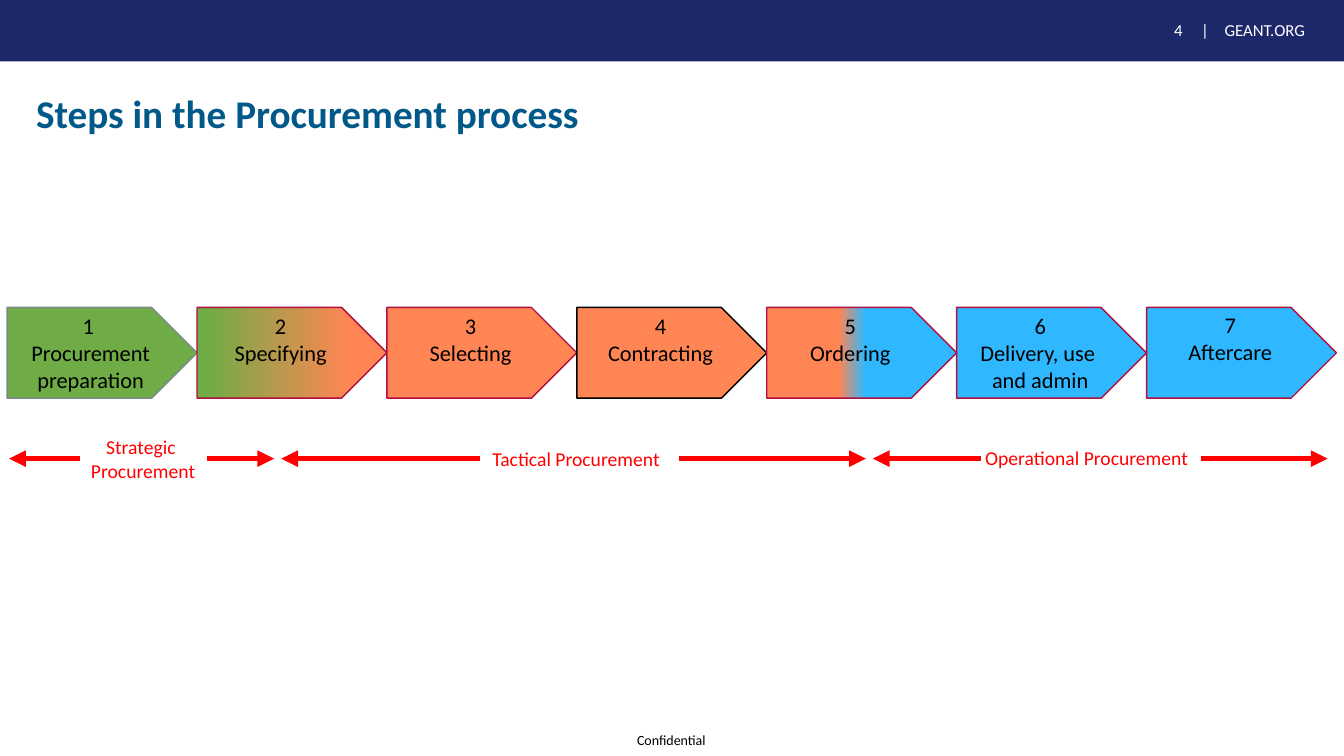
"""Build a slide that shows the seven steps of procurement and their three phases."""
from dataclasses import dataclass
from typing import Any

from lxml.etree import SubElement
from pptx import Presentation
from pptx.dml.color import RGBColor as Rgb
from pptx.enum.shapes import MSO_CONNECTOR as Conn, MSO_SHAPE as Form
from pptx.enum.text import MSO_ANCHOR as Anchor, PP_ALIGN as Align
from pptx.oxml.ns import qn
from pptx.util import Inches, Pt


@dataclass(frozen=True)
class Theme:
    face: str = "Calibri"
    navy: str = "1D286B"
    teal: str = "005988"
    green: str = "6FAC45"
    coral: str = "FF8654"
    sky: str = "2FB8FF"
    wine: str = "AF1040"
    gray: str = "79898B"
    red: str = "FF0000"
    black: str = "000000"
    white: str = "FFFFFF"
    title: int = 28
    step: int = 16
    phase: int = 14
    head: int = 12
    foot: int = 10
    edge: int = 1
    arrow: int = 4


@dataclass(frozen=True)
class Box:
    """Place and size in percent of the slide."""
    x: float
    y: float
    w: float
    h: float


@dataclass(frozen=True)
class Step:
    lines: list[str]
    fill: list[tuple[float, str]]
    edge: str = Theme.wine
    lift: float = 0.05


@dataclass(frozen=True)
class Phase:
    lines: list[str]
    box: Box
    spans: list[tuple[float, float]]


@dataclass(frozen=True)
class Note:
    text: str
    box: Box
    size: int
    color: str
    frame: dict[str, Any]
    para: dict[str, Any]
    bold: bool = False


LOOK = Theme()
WIDE, HIGH = Inches(40 / 3), Inches(7.5)
ROW = Box(0.53, 40.67, 14.13, 12)
LEVEL = 60.67
LIFT = 0.32
MID = {"vertical_anchor": Anchor.MIDDLE, "word_wrap": True}
BARE = {"margin_left": 0, "margin_top": 0, "margin_right": 0, "margin_bottom": 0,
        "word_wrap": False}
RIGHT = {"alignment": Align.RIGHT}
CENTER = {"alignment": Align.CENTER}
TIGHT = {"line_spacing": 0.9}

NOTES = [
    Note("4", Box(85.2, 1.6, 3.53, 4.8), LOOK.head, LOOK.white, MID, RIGHT),
    Note("|", Box(88.43, 1.6, 2.25, 4.8), LOOK.head, LOOK.white, MID, RIGHT),
    Note("GEANT.ORG", Box(90.38, 2, 9.6, 4.27), LOOK.head, LOOK.white, MID, TIGHT),
    Note("Confidential", Box(47.4, 96.8, 5.4, 2.27), LOOK.foot, LOOK.black, BARE, {}),
    Note("Steps in the Procurement process", Box(1.95, 10.53, 86.25, 9.6),
         LOOK.title, LOOK.teal, MID, TIGHT, True),
]
STEPS = [
    Step(["1 ", "Procurement preparation"], [(0, LOOK.green)], LOOK.gray),
    Step(["2", "Specifying"], [(0.04, LOOK.green), (0.8, LOOK.coral)], lift=LIFT),
    Step(["3", "Selecting"], [(0, LOOK.coral)], lift=LIFT),
    Step(["4", "Contracting"], [(0, LOOK.coral)], LOOK.black, LIFT),
    Step(["5", "Ordering"], [(0.38, LOOK.coral), (0.52, LOOK.sky)], lift=LIFT),
    Step(["6", "Delivery, use ", "and admin"], [(0, LOOK.sky)]),
    Step(["7", "Aftercare"], [(0, LOOK.sky)], lift=0.35),
]
PHASES = [
    Phase(["Strategic ", "Procurement"], Box(5.93, 56.93, 9.45, 7.6),
          [(5.93, 0.68), (15.38, 20.4)]),
    Phase(["Tactical Procurement"], Box(35.7, 58.4, 14.33, 4.53),
          [(35.7, 20.93), (50.55, 64.43)]),
    Phase(["Operational Procurement"], Box(72.3, 58.27, 17.1, 4.53),
          [(72.98, 64.95), (89.33, 98.78)]),
]


def across(part: float) -> int:
    return round(WIDE * part / 100)


def down(part: float) -> int:
    return round(HIGH * part / 100)


def place(box: Box) -> tuple[int, int, int, int]:
    return across(box.x), down(box.y), across(box.w), down(box.h)


def apply(item: Any, form: dict[str, Any]) -> None:
    for key, value in form.items():
        setattr(item, key, value)


def write(shape: Any, lines: list[str], size: int, color: str,
          frame: dict[str, Any], para: dict[str, Any], bold: bool = False) -> None:
    body = shape.text_frame
    apply(body, frame)
    for num, line in enumerate(lines):
        item = body.add_paragraph() if num else body.paragraphs[0]
        apply(item, para)
        run = item.add_run()
        run.text = line
        apply(run.font, {"name": LOOK.face, "size": Pt(size), "bold": bold})
        run.font.color.rgb = Rgb.from_string(color)


def paint(shape: Any, stops: list[tuple[float, str]]) -> None:
    shape.shadow.inherit = False
    if len(stops) == 1:
        shape.fill.solid()
        shape.fill.fore_color.rgb = Rgb.from_string(stops[0][1])
        return
    shape.fill.gradient()
    shape.fill.gradient_angle = 0
    for stop, (spot, color) in zip(shape.fill.gradient_stops, stops):
        stop.position = spot
        stop.color.rgb = Rgb.from_string(color)


def draw_step(tree: Any, num: int, step: Step) -> None:
    box = Box(ROW.x + num * ROW.w, ROW.y, ROW.w, ROW.h)
    shape = tree.add_shape(Form.PENTAGON, *place(box))
    paint(shape, step.fill)
    shape.line.color.rgb = Rgb.from_string(step.edge)
    shape.line.width = Pt(LOOK.edge)
    frame = MID | {"margin_bottom": Inches(step.lift)}
    write(shape, step.lines, LOOK.step, LOOK.black, frame, CENTER)


def draw_arrow(tree: Any, start: float, tip: float) -> None:
    line = tree.add_connector(Conn.STRAIGHT, across(start), down(LEVEL),
                              across(tip), down(LEVEL))
    line.line.color.rgb = Rgb.from_string(LOOK.red)
    line.line.width = Pt(LOOK.arrow)
    SubElement(line.line._get_or_add_ln(), qn("a:tailEnd"), type="triangle")
    SubElement(line._element.spPr, qn("a:effectLst"))


def draw_phase(tree: Any, phase: Phase) -> None:
    for start, tip in phase.spans:
        draw_arrow(tree, start, tip)
    label = tree.add_textbox(*place(phase.box))
    write(label, phase.lines, LOOK.phase, LOOK.red, {"word_wrap": False}, CENTER)


def main() -> None:
    deck = Presentation()
    apply(deck, {"slide_width": WIDE, "slide_height": HIGH})
    tree = deck.slides.add_slide(deck.slide_layouts[6]).shapes
    band = tree.add_shape(Form.RECTANGLE, *place(Box(0, 0, 100, 8.13)))
    paint(band, [(0, LOOK.navy)])
    band.line.fill.background()
    for note in NOTES:
        write(tree.add_textbox(*place(note.box)), [note.text], note.size,
              note.color, note.frame, note.para, note.bold)
    for num, step in enumerate(STEPS):
        draw_step(tree, num, step)
    for phase in PHASES:
        draw_phase(tree, phase)
    deck.save("out.pptx")


if __name__ == "__main__":
    main()
